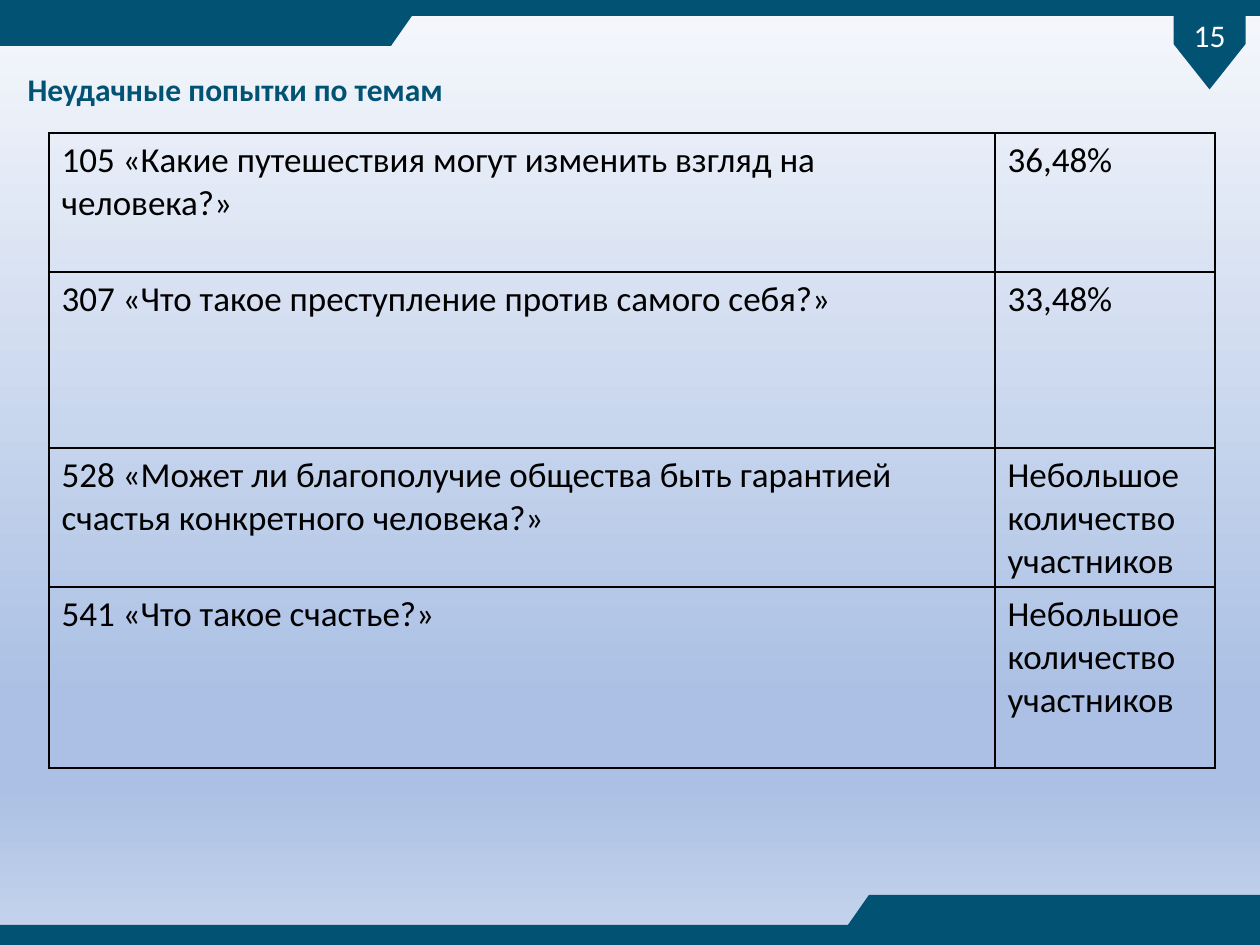
from copy import deepcopy

from lxml import etree
from pptx import Presentation
from pptx.dml.color import RGBColor
from pptx.enum.shapes import MSO_SHAPE
from pptx.enum.text import MSO_ANCHOR, MSO_AUTO_SIZE, PP_ALIGN
from pptx.oxml.ns import qn
from pptx.util import Emu, Pt

LEFT, CENTER = PP_ALIGN.LEFT, PP_ALIGN.CENTER
TOP, MIDDLE = MSO_ANCHOR.TOP, MSO_ANCHOR.MIDDLE
PLATE = MSO_SHAPE.PENTAGON
GROW = MSO_AUTO_SIZE.SHAPE_TO_FIT_TEXT
SCALE = 914400 / 126
WIDE, HIGH = 1260, 945


def px(n):
    return Emu(round(n * SCALE))


def paint(code):
    return RGBColor.from_string(code)


def write(frame, text, size=20, color="000000", bold=False, align=LEFT, anchor=TOP):
    """Fill a text frame, one paragraph per line."""
    frame.vertical_anchor = anchor
    for i, line in enumerate(text.split("\n")):
        par = frame.paragraphs[0] if i == 0 else frame.add_paragraph()
        par.alignment = align
        run = par.add_run()
        run.text = line
        font = run.font
        font.name, font.size, font.bold = "Calibri", Pt(size), bold
        font.color.rgb = paint(color)


class Deck:
    teal = "025373"
    ink = "000000"

    def __init__(self):
        self.prs = Presentation()
        self.prs.slide_width, self.prs.slide_height = px(WIDE), px(HIGH)
        self.slide = self.prs.slides.add_slide(self.prs.slide_layouts[5])
        self.shapes = self.slide.shapes

    def backdrop(self, stops):
        fill = self.slide.background.fill
        fill.gradient()
        fill.gradient_angle = 270
        group = next(self.slide.element.iter(qn("a:gsLst")))
        for _ in range(len(stops) - len(group)):
            group.append(deepcopy(group[0]))
        for stop, (place, code) in zip(fill.gradient_stops, stops):
            stop.position = place
            stop.color.rgb = paint(code)

    def solid(self, shape):
        shape.shadow.inherit = False
        shape.fill.solid()
        shape.fill.fore_color.rgb = paint(self.teal)
        shape.line.fill.background()

    def band(self, points):
        pen = self.shapes.build_freeform(*points[0], scale=SCALE)
        pen.add_line_segments(points[1:], close=True)
        self.solid(pen.convert_to_shape())

    def badge(self, text, x, y, w, h):
        tag = self.shapes.add_shape(PLATE, px(x), px(y), px(w), px(h))
        tag.rotation = 90
        tag.adjustments[0] = 0.63
        self.solid(tag)
        frame = tag.text_frame
        frame.margin_left = frame.margin_right = px(1)
        frame.margin_top = frame.margin_bottom = px(1)
        # Turn the text back upright
        frame._txBody.find(qn("a:bodyPr")).set("vert", "vert270")
        write(frame, text, size=18, color="FFFFFF", align=CENTER, anchor=MIDDLE)

    def title(self, text, x, y, w, h):
        head = self.shapes.title
        head.left, head.top, head.width, head.height = map(px, (x, y, w, h))
        frame = head.text_frame
        frame.word_wrap = False
        frame.auto_size = GROW
        write(frame, text, size=18, color=self.teal, bold=True)

    def border(self, cell):
        props = cell._tc.get_or_add_tcPr()
        for i, side in enumerate(("lnL", "lnR", "lnT", "lnB")):
            line = etree.Element(qn("a:" + side), w=str(Pt(1)))
            fill = etree.SubElement(line, qn("a:solidFill"))
            etree.SubElement(fill, qn("a:srgbClr"), val=self.ink)
            props.insert(i, line)

    def table(self, rows, x, y, cols, tall):
        grid = self.shapes.add_table(len(rows), len(cols), px(x), px(y),
                                     px(sum(cols)), px(sum(tall))).table
        grid.first_row = grid.horz_banding = False
        for col, size in zip(grid.columns, cols):
            col.width = px(size)
        for row, size, texts in zip(grid.rows, tall, rows):
            row.height = px(size)
            for cell, text in zip(row.cells, texts):
                cell.fill.background()
                self.border(cell)
                write(cell.text_frame, text, color=self.ink)


def main():
    deck = Deck()
    deck.backdrop([(0, "F6F8FC"), (0.74, "ABC0E4"), (0.83, "ABC0E4"), (1, "C7D5ED")])

    # Bottom band, and the same band turned around for the top
    base = [(869, 895), (WIDE, 895), (WIDE, HIGH), (0, HIGH), (0, 925), (848, 925)]
    deck.band(base)
    deck.band([(WIDE - x, HIGH - 4 - y) for x, y in base])

    # Page number and heading
    deck.badge("15", 1166, 10, 87, 72)
    deck.title("Неудачные попытки по темам", 15, 64, 445, 50)

    # Topics and their share of failed tries
    rows = [
        ("105 «Какие путешествия могут изменить взгляд на человека?»", "36,48%"),
        ("307 «Что такое преступление против самого себя?»", "33,48%"),
        ("528 «Может ли благополучие общества быть гарантией счастья "
         "конкретного человека?»", "Небольшое\nколичество участников"),
        ("541 «Что такое счастье?»", "Небольшое количество участников"),
    ]
    deck.table(rows, 49, 133, cols=(946, 220), tall=(139, 176, 139, 181))

    deck.prs.save("out.pptx")


if __name__ == "__main__":
    main()
